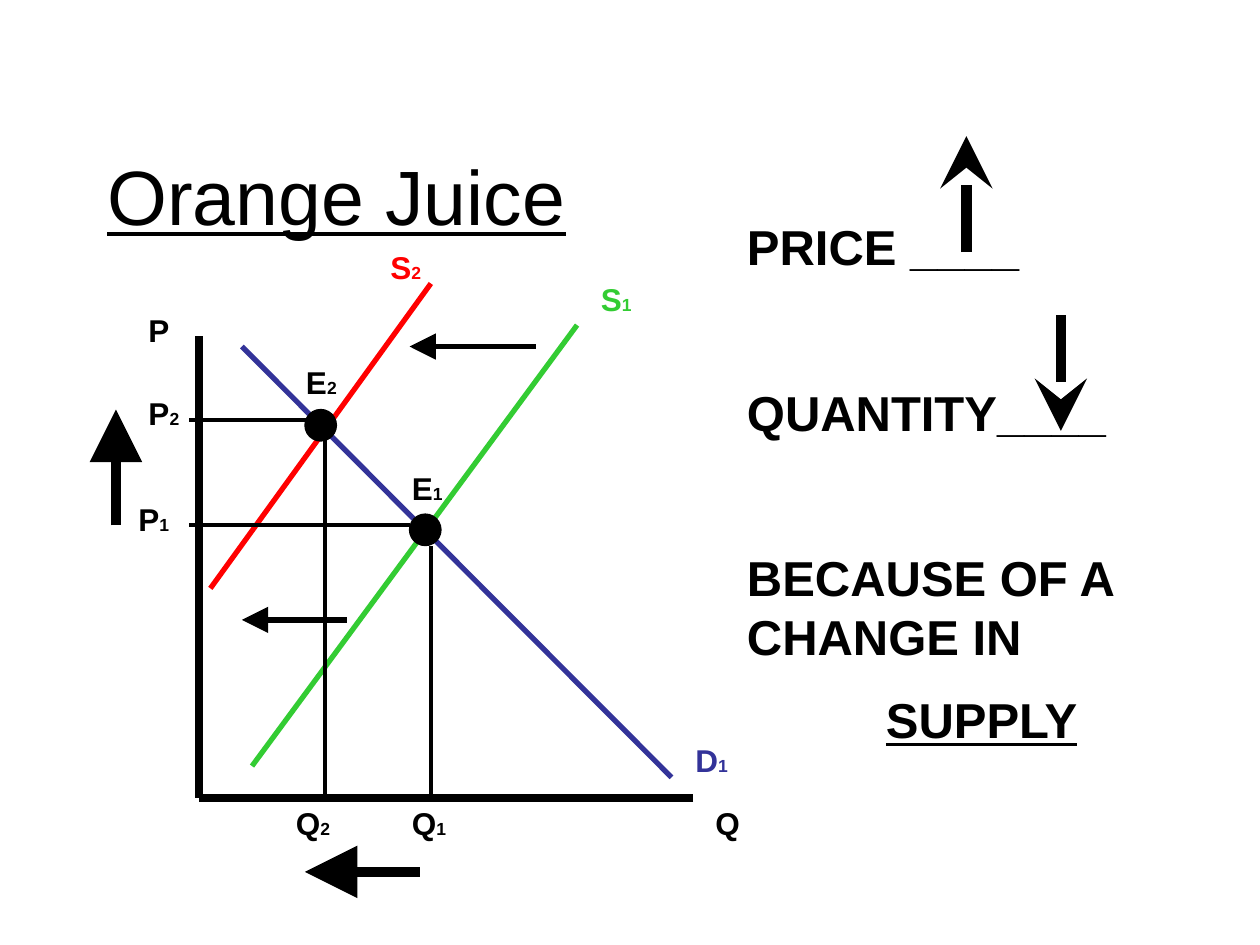
from typing import NamedTuple

from lxml import etree
from pptx import Presentation
from pptx.dml.color import RGBColor
from pptx.enum import shapes, text
from pptx.oxml.ns import qn
from pptx.util import Inches, Pt

COLORS = {"ink": "000000", "demand": "333399", "supply": "33CC33", "shifted": "FF0000"}
FONT = "Arial"


class Line(NamedTuple):
    start: tuple[float, float]
    end: tuple[float, float]
    width: float
    color: str = "ink"
    head: str = ""


class Label(NamedTuple):
    letter: str
    index: str
    left: float
    top: float
    color: str = "ink"


class Point(NamedTuple):
    left: float
    top: float


AXES = [
    Line((1.58, 2.67), (1.58, 6.33), 4.5),
    Line((5.5, 6.33), (1.58, 6.33), 4.5),
]
CURVES = [
    Line((1.92, 2.75), (5.33, 6.17), 3, "demand"),
    Line((2, 6.08), (4.58, 2.58), 3, "supply"),
    Line((1.67, 4.67), (3.42, 2.25), 3, "shifted"),
]
GUIDES = [
    Line((1.5, 4.17), (3.25, 4.17), 2.25),
    Line((3.42, 6.33), (3.42, 4.33), 2.25),
    Line((1.5, 3.33), (2.58, 3.33), 2.25),
    Line((2.58, 6.33), (2.58, 3.42), 2.25),
]
ARROWS = [
    Line((4.25, 2.75), (3.25, 2.75), 3, head="triangle"),
    Line((2.75, 4.92), (1.92, 4.92), 3, head="triangle"),
    Line((0.92, 4.17), (0.92, 3.25), 6, head="triangle"),
    Line((3.33, 6.92), (2.42, 6.92), 6, head="triangle"),
    Line((7.67, 2), (7.67, 1.08), 6, head="stealth"),
    Line((8.42, 2.5), (8.42, 3.42), 6, head="stealth"),
]
EQUILIBRIA = [Point(3.25, 4.08), Point(2.42, 3.25)]
LABELS = [
    Label("P", "", 1.08, 2.42),
    Label("Q", "", 5.58, 6.33),
    Label("D", "1", 5.42, 5.83, "demand"),
    Label("S", "1", 4.67, 2.17, "supply"),
    Label("S", "2", 3, 1.92, "shifted"),
    Label("E", "1", 3.17, 3.67),
    Label("E", "2", 2.33, 2.83),
    Label("P", "1", 1, 3.92),
    Label("P", "2", 1.08, 3.08),
    Label("Q", "1", 3.17, 6.33),
    Label("Q", "2", 2.25, 6.33),
]
# Each conclusion with the space above it in points
CONCLUSIONS = [
    ("PRICE ____", 0),
    ("QUANTITY____", 61),
    ("BECAUSE OF A CHANGE IN", 61),
    ("SUPPLY", 14),
]


def rgb(name: str) -> RGBColor:
    return RGBColor.from_string(COLORS[name])


def set_font(font, size: float, color: str = "ink", bold: bool = True) -> None:
    font.name, font.size, font.bold = FONT, Pt(size), bold
    font.color.rgb = rgb(color)


def draw_line(slide, line: Line) -> None:
    ends = [Inches(value) for value in (*line.start, *line.end)]
    connector = slide.shapes.add_connector(shapes.MSO_CONNECTOR.STRAIGHT, *ends)
    connector.line.width = Pt(line.width)
    connector.line.color.rgb = rgb(line.color)
    if line.head:
        etree.SubElement(connector.line._get_or_add_ln(), qn("a:tailEnd"),
                         type=line.head, w="lg", len="lg")
    etree.SubElement(connector._element.spPr, qn("a:effectLst"))


def draw_point(slide, point: Point) -> None:
    dot = slide.shapes.add_shape(shapes.MSO_SHAPE.OVAL, Inches(point.left),
                                 Inches(point.top), Inches(0.25), Inches(0.25))
    dot.shadow.inherit = False
    dot.fill.solid()
    dot.fill.fore_color.rgb = rgb("ink")
    dot.line.color.rgb = rgb("ink")
    dot.line.width = Pt(0.75)


def add_text_frame(slide, left: float, top: float, width: float, height: float):
    frame = slide.shapes.add_textbox(
        Inches(left), Inches(top), Inches(width), Inches(height)).text_frame
    frame.word_wrap = True
    return frame


def draw_label(slide, label: Label) -> None:
    width = 0.58 if label.index else 0.42
    paragraph = add_text_frame(slide, label.left, label.top, width, 0.4).paragraphs[0]
    for part, size in ((label.letter, 18), (label.index, 10)):
        if part:
            run = paragraph.add_run()
            run.text = part
            set_font(run.font, size, label.color)


def write_title(slide) -> None:
    title = slide.shapes.title
    title.left, title.top = Inches(0.42), Inches(0.92)
    title.width, title.height = Inches(4.5), Inches(1.25)
    title.text_frame.text = "Orange Juice"
    title.text_frame.vertical_anchor = text.MSO_ANCHOR.MIDDLE
    heading = title.text_frame.paragraphs[0]
    heading.alignment = text.PP_ALIGN.CENTER
    set_font(heading.font, 44, bold=False)
    heading.font.underline = True


def write_conclusions(slide) -> None:
    frame = add_text_frame(slide, 5.83, 1.67, 3.92, 4.54)
    for number, (wording, space) in enumerate(CONCLUSIONS):
        paragraph = frame.add_paragraph() if number else frame.paragraphs[0]
        paragraph.text = wording
        paragraph.space_before = Pt(space)
        set_font(paragraph.font, 28)
    paragraph.alignment = text.PP_ALIGN.CENTER
    paragraph.font.underline = True


def main() -> None:
    deck = Presentation()
    deck.slide_width, deck.slide_height = Inches(10), Inches(7.5)
    slide = deck.slides.add_slide(deck.slide_layouts[5])
    write_title(slide)
    for line in AXES + CURVES + GUIDES + ARROWS:
        draw_line(slide, line)
    for point in EQUILIBRIA:
        draw_point(slide, point)
    for label in LABELS:
        draw_label(slide, label)
    write_conclusions(slide)
    deck.save("out.pptx")


if __name__ == "__main__":
    main()
